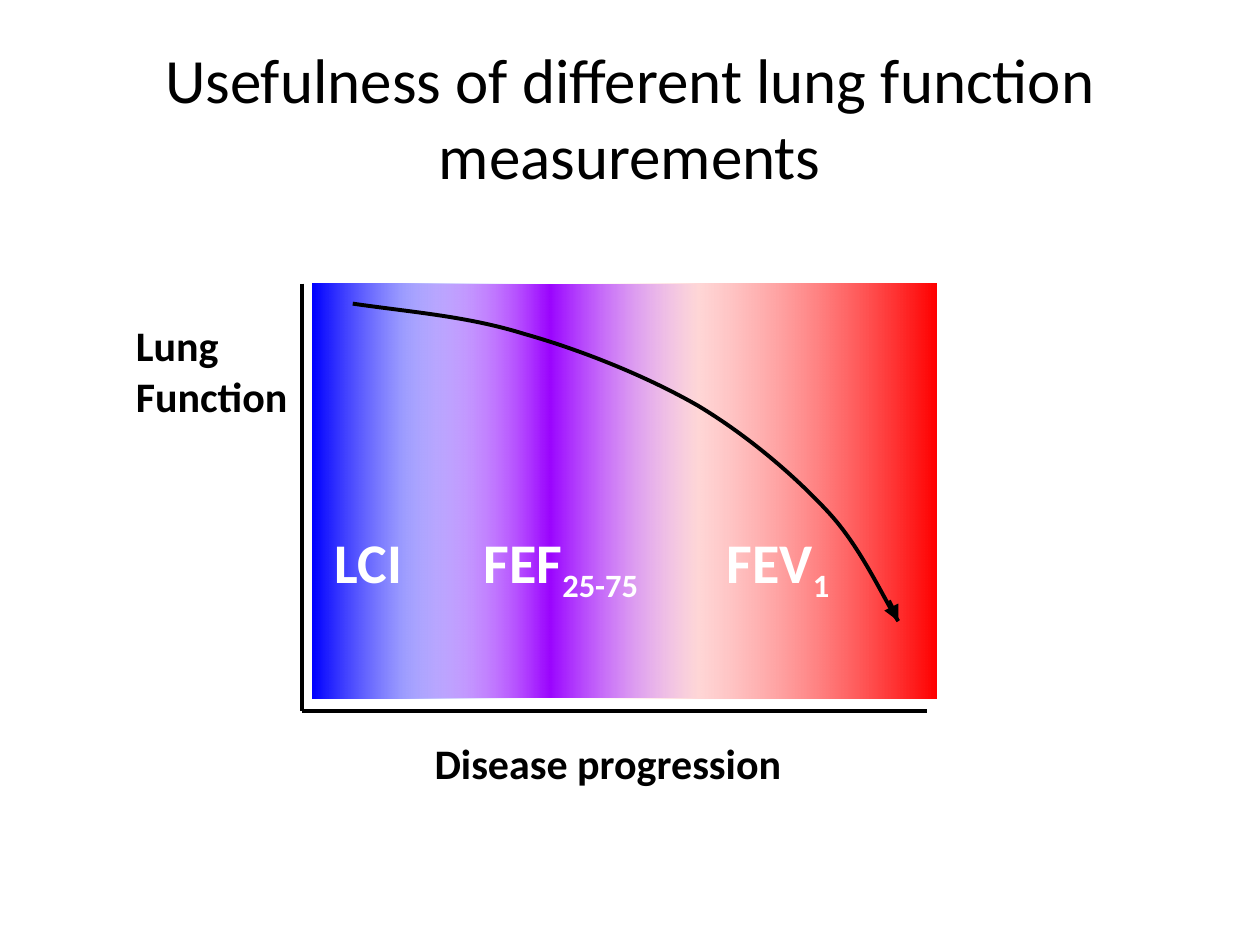
from lxml import etree
from pptx import Presentation
from pptx import util as u
from pptx.dml.color import RGBColor
from pptx.enum import shapes, text
from pptx.oxml.ns import qn

COLORS = {"black": "000000", "white": "FFFFFF", "blue": "0000FF",
          "purple": "9900FF", "red": "FF0000"}
INK = RGBColor.from_string(COLORS["black"])

deck = Presentation()
deck.slide_width, deck.slide_height = u.Inches(10), u.Inches(7.5)
page = deck.slides.add_slide(deck.slide_layouts[5])


def add_line(start, end, width):
    line = page.shapes.add_connector(
        shapes.MSO_CONNECTOR.STRAIGHT, *map(u.Inches, start + end))
    line.line.color.rgb = INK
    line.line.width = u.Pt(width)
    etree.SubElement(line._element.spPr, qn("a:effectLst"))
    return line


def style_span(span, size, color, bold=True):
    span.font.name = "Calibri"
    span.font.size = u.Pt(size)
    span.font.bold = bold
    span.font.color.rgb = RGBColor.from_string(COLORS[color])


# Title
title = page.shapes.title
title.left, title.top, title.width, title.height = map(u.Inches, (0.5, 0.3, 9, 1.25))
title.text_frame.text = "Usefulness of different lung function measurements"
title.text_frame.vertical_anchor = text.MSO_ANCHOR.MIDDLE
title_para = title.text_frame.paragraphs[0]
title_para.alignment = text.PP_ALIGN.CENTER
style_span(title_para.runs[0], 36, "black", bold=False)

# Axes
origin = (2.4, 5.64)
add_line((2.4, 2.25), origin, 2.25)
add_line(origin, (7.36, 5.64), 2.25)

# Overlapping gradient bands: left, width, stops of (percent, color, opacity)
bands = [
    (3.19, 2.36, [(0, "white", 100), (50, "purple", 100), (100, "white", 100)]),
    (2.48, 1.89, [(0, "blue", 100), (100, "white", 0)]),
    (4.29, 3.14, [(0, "white", 0), (100, "red", 100)]),
]
for left, width, stops in bands:
    band = page.shapes.add_shape(
        shapes.MSO_SHAPE.RECTANGLE, *map(u.Inches, (left, 2.25, width, 3.29)))
    band.shadow.inherit = False
    band.line.fill.background()
    band.fill.gradient()
    band.fill.gradient_angle = 0
    stop_list = band._element.spPr.find(".//" + qn("a:gsLst"))
    for old_stop in list(stop_list):
        stop_list.remove(old_stop)
    for percent, color, opacity in stops:
        stop = etree.SubElement(stop_list, qn("a:gs"), pos=str(percent * 1000))
        tint = etree.SubElement(stop, qn("a:srgbClr"), val=COLORS[color])
        if opacity < 100:
            etree.SubElement(tint, qn("a:alpha"), val=str(opacity * 1000))

# Decline curve: start point, then three Bezier points per segment
curve_points = [
    (2.8, 2.41),
    (3.28, 2.48), (3.71, 2.51), (4.16, 2.65),
    (4.62, 2.78), (5.14, 2.99), (5.54, 3.22),
    (5.94, 3.46), (6.31, 3.78), (6.57, 4.06),
    (6.84, 4.35), (7.01, 4.75), (7.13, 4.93),
]
builder = page.shapes.build_freeform(*curve_points[0], scale=u.Inches(1))
builder = page.shapes.build_freeform(
    *map(u.Inches, curve_points[0]), scale=1.0)
builder.add_line_segments(
    [(u.Inches(x), u.Inches(y)) for x, y in curve_points[1:]], close=False)
curve = builder.convert_to_shape()
curve.shadow.inherit = False
curve.fill.background()
curve.line.color.rgb = INK
curve.line.width = u.Pt(2.25)
outline = curve._element.spPr.find(".//" + qn("a:path"))
segments = outline.findall(qn("a:lnTo"))
for first in range(0, len(segments), 3):
    bezier = etree.SubElement(outline, qn("a:cubicBezTo"))
    for segment in segments[first:first + 3]:
        bezier.append(segment[0])
        outline.remove(segment)

# Arrowhead at the end of the curve
arrow = add_line((7.05, 4.77), curve_points[-1], 3)
etree.SubElement(arrow.line._get_or_add_ln(), qn("a:tailEnd"), type="triangle")

# Labels: place, size, color, wrap, paragraphs of (text, subscript)
labels = [
    ((2.56, 4.14, 0.99, 0.64), 32, "white", True, [("LCI", "")]),
    ((3.74, 4.14, 2.05, 0.64), 32, "white", True, [("FEF", "25-75")]),
    ((5.67, 4.14, 1.3, 0.64), 32, "white", True, [("FEV", "1")]),
    ((0.98, 2.49, 1.42, 0.91), 24, "black", False, [("Lung", ""), ("Function", "")]),
    ((3.35, 5.8, 2.98, 0.51), 24, "black", False, [("Disease progression", "")]),
]
for place, size, color, wrap, lines in labels:
    box = page.shapes.add_textbox(*map(u.Inches, place))
    frame = box.text_frame
    frame.word_wrap = wrap
    frame.auto_size = text.MSO_AUTO_SIZE.SHAPE_TO_FIT_TEXT
    frame.text = "\n".join(words for words, _ in lines)
    for para, (_, subscript) in zip(frame.paragraphs, lines):
        style_span(para.runs[0], size, color)
        if subscript:
            span = para.add_run()
            span.text = subscript
            style_span(span, size, color)
            span.font._element.set("baseline", "-25000")

deck.save("out.pptx")
